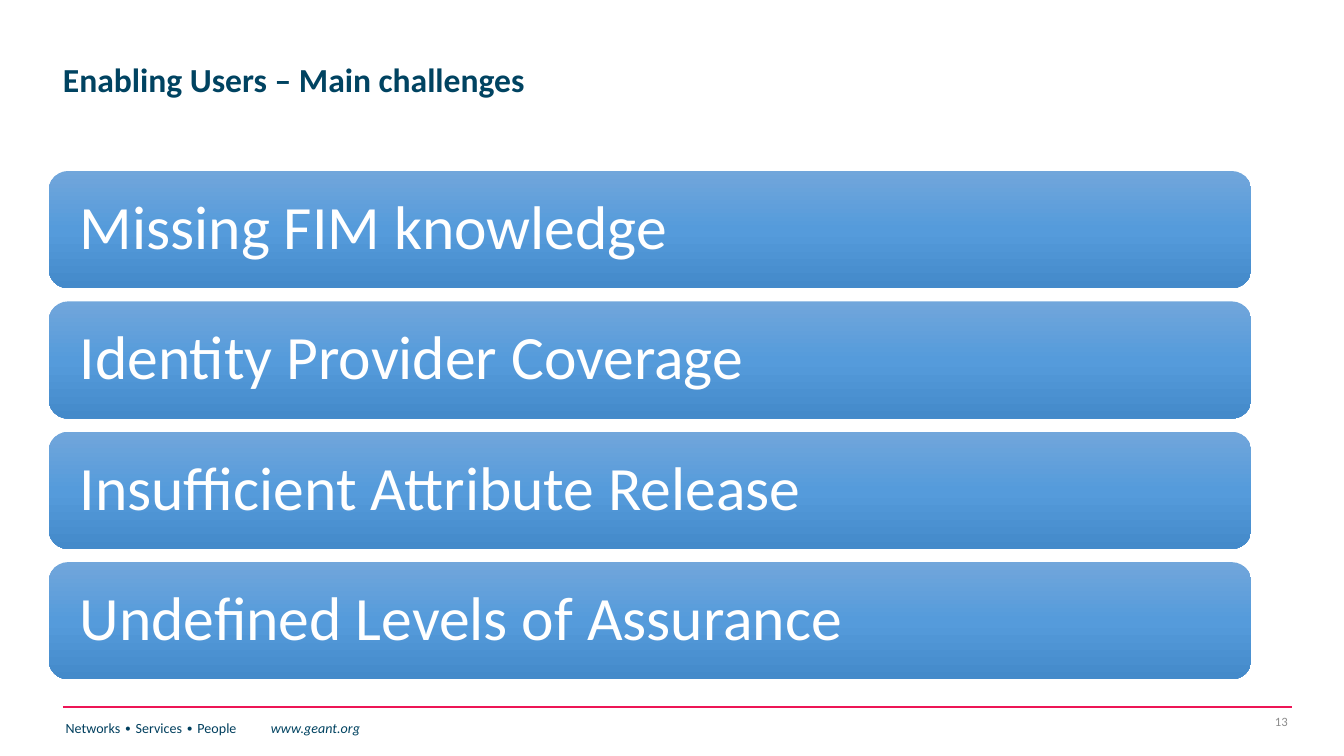
from copy import deepcopy

from lxml.etree import SubElement
from pptx import Presentation
from pptx.dml.color import RGBColor
from pptx.enum.shapes import MSO_CONNECTOR, MSO_SHAPE
from pptx.enum.text import MSO_ANCHOR, MSO_AUTO_SIZE, PP_ALIGN
from pptx.oxml.ns import qn
from pptx.util import Cm, Pt

NAVY = RGBColor(0x00, 0x43, 0x61)
INK = RGBColor(0x00, 0x3F, 0x5E)
PINK = RGBColor(0xED, 0x15, 0x56)
GREY = RGBColor(0x8C, 0x8C, 0x8C)
WHITE = RGBColor(0xFF, 0xFF, 0xFF)
BLUES = (
    (0, RGBColor(0x71, 0xA6, 0xDB)),
    (0.5, RGBColor(0x55, 0x9B, 0xDB)),
    (1, RGBColor(0x44, 0x8A, 0xCA)),
)
FONT = "Calibri"
ITEMS = (
    "Missing FIM knowledge",
    "Identity Provider Coverage",
    "Insufficient Attribute Release",
    "Undefined Levels of Assurance",
)


def write(shape, runs, size, color, bold=False, align=PP_ALIGN.LEFT,
          anchor=MSO_ANCHOR.MIDDLE, inset=0.25, pad=0.13, line=1.0, tab=None):
    frame = shape.text_frame
    frame.word_wrap = True
    frame.auto_size = MSO_AUTO_SIZE.NONE
    frame.vertical_anchor = anchor
    frame.margin_left = frame.margin_right = Cm(inset)
    frame.margin_top = frame.margin_bottom = Cm(pad)
    para = frame.paragraphs[0]
    para.alignment = align
    para.line_spacing = line
    if tab:
        stops = SubElement(para._p.get_or_add_pPr(), qn("a:tabLst"))
        SubElement(stops, qn("a:tab"), pos=str(Cm(tab)), algn="l")
    for text, italic, tint in runs:
        run = para.add_run()
        run.text = text
        font = run.font
        font.name, font.size = FONT, Pt(size)
        font.bold, font.italic = bold, italic
        font.color.rgb = tint or color


def shade(shape):
    fill = shape.fill
    fill.gradient()
    fill.gradient_angle = 270
    stops = shape._element.spPr.find(".//" + qn("a:gsLst"))
    stops.append(deepcopy(stops[-1]))
    for stop, (place, color) in zip(fill.gradient_stops, BLUES):
        stop.position = place
        stop.color.rgb = color


def head(slide, left, top, width, height):
    title = slide.shapes.title
    title.left, title.top = Cm(left), Cm(top)
    title.width, title.height = Cm(width), Cm(height)
    write(title, [("Enabling Users – Main challenges", False, None)],
          18, NAVY, bold=True, line=0.9)


def bars(slide, left, top, width, height, gap=0.25):
    tall = (height - gap * (len(ITEMS) - 1)) / len(ITEMS)
    for index, item in enumerate(ITEMS):
        bar = slide.shapes.add_shape(
            MSO_SHAPE.ROUNDED_RECTANGLE, Cm(left),
            Cm(top + index * (tall + gap)), Cm(width), Cm(tall))
        bar.shadow.inherit = False
        bar.line.fill.background()
        shade(bar)
        write(bar, [(item, False, None)], 33, WHITE,
              inset=0.48, line=0.9)


def foot(slide, left, top, width, height):
    shapes = slide.shapes
    rule = shapes.add_connector(MSO_CONNECTOR.STRAIGHT, Cm(left), Cm(top),
                                Cm(left + width), Cm(top))
    rule.line.color.rgb = PINK
    rule.line.width = Pt(1)
    SubElement(rule._element.spPr, qn("a:effectLst"))
    note = shapes.add_textbox(Cm(left - 0.2), Cm(top + 0.1),
                              Cm(8.66), Cm(height))
    write(note, [("Networks ∙ Services ∙ People\t", False, None),
                 ("www.geant.org", True, NAVY)],
          7.5, INK, anchor=MSO_ANCHOR.TOP, tab=3.88)
    page = shapes.add_textbox(Cm(left + width - 1.37), Cm(top - 0.02),
                              Cm(1.55), Cm(0.58))
    write(page, [("13", False, None)], 6.8, GREY, align=PP_ALIGN.RIGHT)


def main():
    deck = Presentation()
    deck.slide_width, deck.slide_height = Cm(25.4), Cm(14.28)
    slide = deck.slides.add_slide(deck.slide_layouts[5])
    head(slide, 0.94, 0.15, 20, 2.77)
    bars(slide, 0.92, 3.23, 22.73, 9.6)
    foot(slide, 1.19, 13.36, 23.22, 0.89)
    deck.save("out.pptx")


if __name__ == "__main__":
    main()
